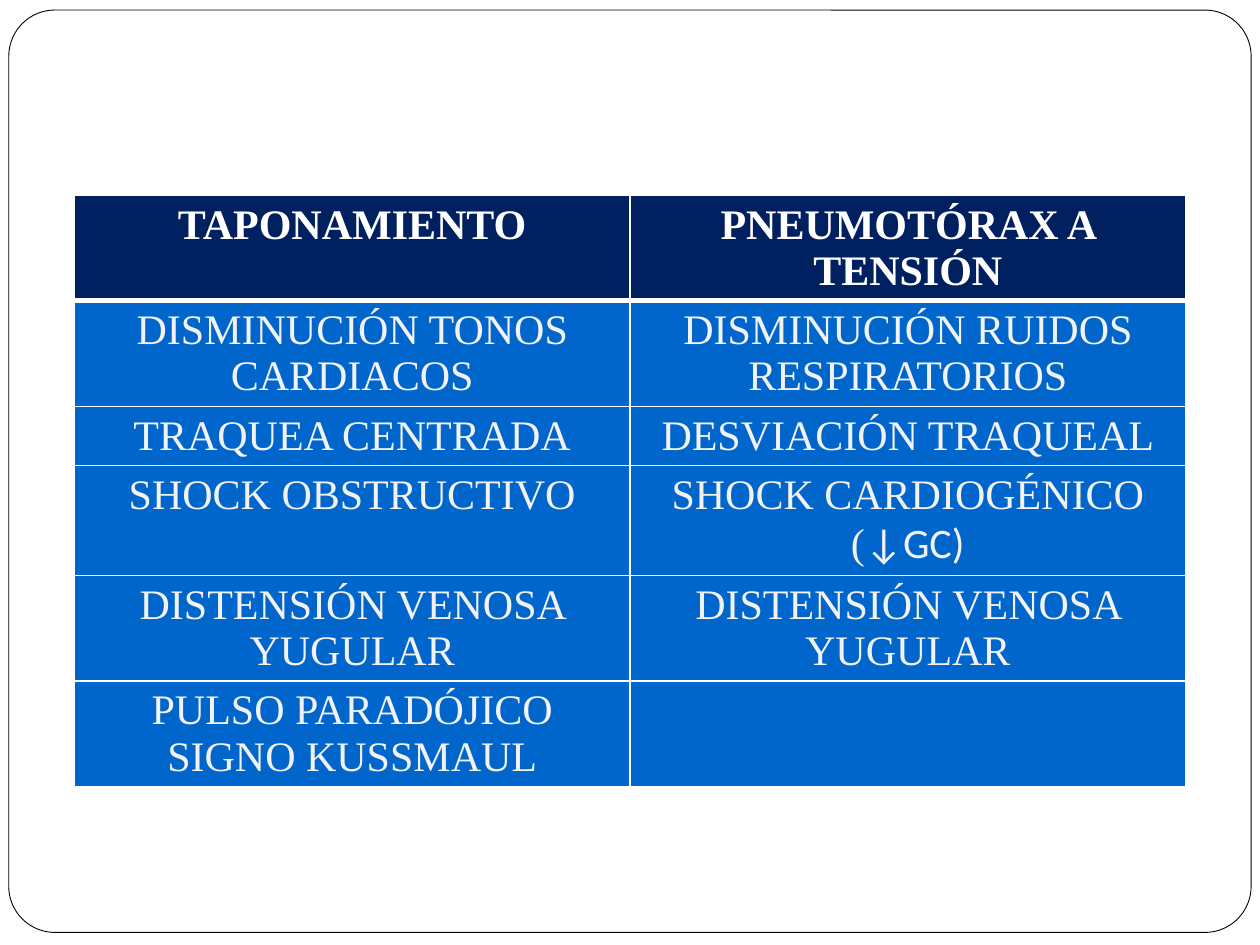
from dataclasses import dataclass

from lxml.etree import SubElement
from pptx import Presentation
from pptx.dml.color import RGBColor
from pptx.enum.shapes import MSO_SHAPE
from pptx.enum.text import PP_ALIGN
from pptx.oxml.ns import qn
from pptx.util import Inches, Pt


@dataclass(frozen=True)
class Theme:
    white: str = "FFFFFF"
    black: str = "000000"
    navy: str = "002060"
    blue: str = "0066CC"
    pale: str = "F2F2F2"
    serif: str = "Times New Roman"
    sans: str = "Calibri"
    size: int = 24
    thin: float = 1
    thick: float = 3


THEME = Theme()

# Each cell is a list of paragraphs; each paragraph is a list of (text, font) runs.
def plain(*lines):
    return [[(line, THEME.serif)] for line in lines]


ROWS = [
    (plain("TAPONAMIENTO"), plain("PNEUMOTÓRAX A TENSIÓN")),
    (plain("DISMINUCIÓN TONOS CARDIACOS"),
     plain("DISMINUCIÓN RUIDOS RESPIRATORIOS")),
    (plain("TRAQUEA CENTRADA"), plain("DESVIACIÓN TRAQUEAL")),
    (plain("SHOCK OBSTRUCTIVO"),
     [[("SHOCK CARDIOGÉNICO (", THEME.serif), ("↓GC)", THEME.sans)]]),
    (plain("DISTENSIÓN VENOSA YUGULAR"), plain("DISTENSIÓN VENOSA YUGULAR")),
    (plain("PULSO PARADÓJICO", "SIGNO KUSSMAUL"), []),
]


def paint(fill, color):
    fill.solid()
    fill.fore_color.rgb = RGBColor.from_string(color)


def add_frame(slide, box):
    frame = slide.shapes.add_shape(MSO_SHAPE.ROUNDED_RECTANGLE, *box)
    frame.adjustments[0] = 0.05
    frame.shadow.inherit = False
    paint(frame.fill, THEME.white)
    paint(frame.line.fill, THEME.black)
    frame.line.width = Pt(0.5)


def set_edges(cell, widths):
    """Draw white cell borders; call before filling, as the XML order requires."""
    props = cell._tc.get_or_add_tcPr()
    for side, width in widths.items():
        edge = SubElement(props, qn(f"a:ln{side}"), w=str(Pt(width)))
        solid = SubElement(edge, qn("a:solidFill"))
        SubElement(solid, qn("a:srgbClr"), val=THEME.white)


def write_cell(cell, lines, style):
    frame = cell.text_frame
    for index, runs in enumerate(lines):
        para = frame.add_paragraph() if index else frame.paragraphs[0]
        para.alignment = PP_ALIGN.CENTER
        for text, face in runs:
            run = para.add_run()
            run.text = text
            for name, value in style.items():
                setattr(run.font, name, value)
            run.font.name = face
            paint(run.font.fill, THEME.white if style["bold"] else THEME.pale)


def add_grid(slide, box, rows):
    """Row heights start at the given minimum and grow with their text."""
    table = slide.shapes.add_table(len(rows), len(rows[0]), *box).table
    for top, row in enumerate(rows):
        head = top == 0
        widths = {
            "L": THEME.thin,
            "R": THEME.thin,
            "T": THEME.thick if top == 1 else THEME.thin,
            "B": THEME.thick if head else THEME.thin,
        }
        style = {"size": Pt(THEME.size), "bold": head}
        for left, lines in enumerate(row):
            cell = table.cell(top, left)
            set_edges(cell, widths)
            paint(cell.fill, THEME.navy if head else THEME.blue)
            write_cell(cell, lines, style)


def main():
    deck = Presentation()
    deck.slide_width, deck.slide_height = Inches(10), Inches(7.5)
    slide = deck.slides.add_slide(deck.slide_layouts[6])
    add_frame(slide, [Inches(n) for n in (0.07, 0.08, 9.86, 7.32)])
    least = 0.41
    add_grid(slide, [Inches(n) for n in (0.59, 1.55, 8.82, least * len(ROWS))], ROWS)
    deck.save("out.pptx")


if __name__ == "__main__":
    main()
